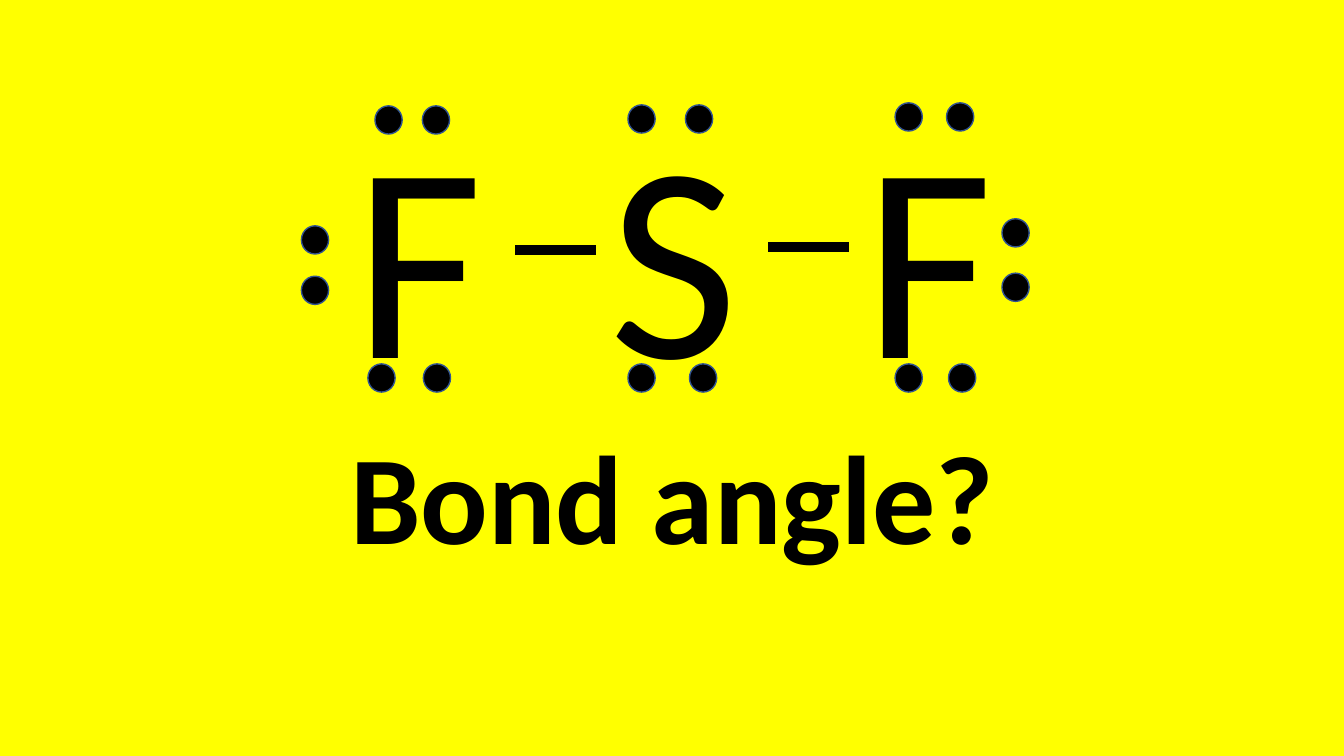
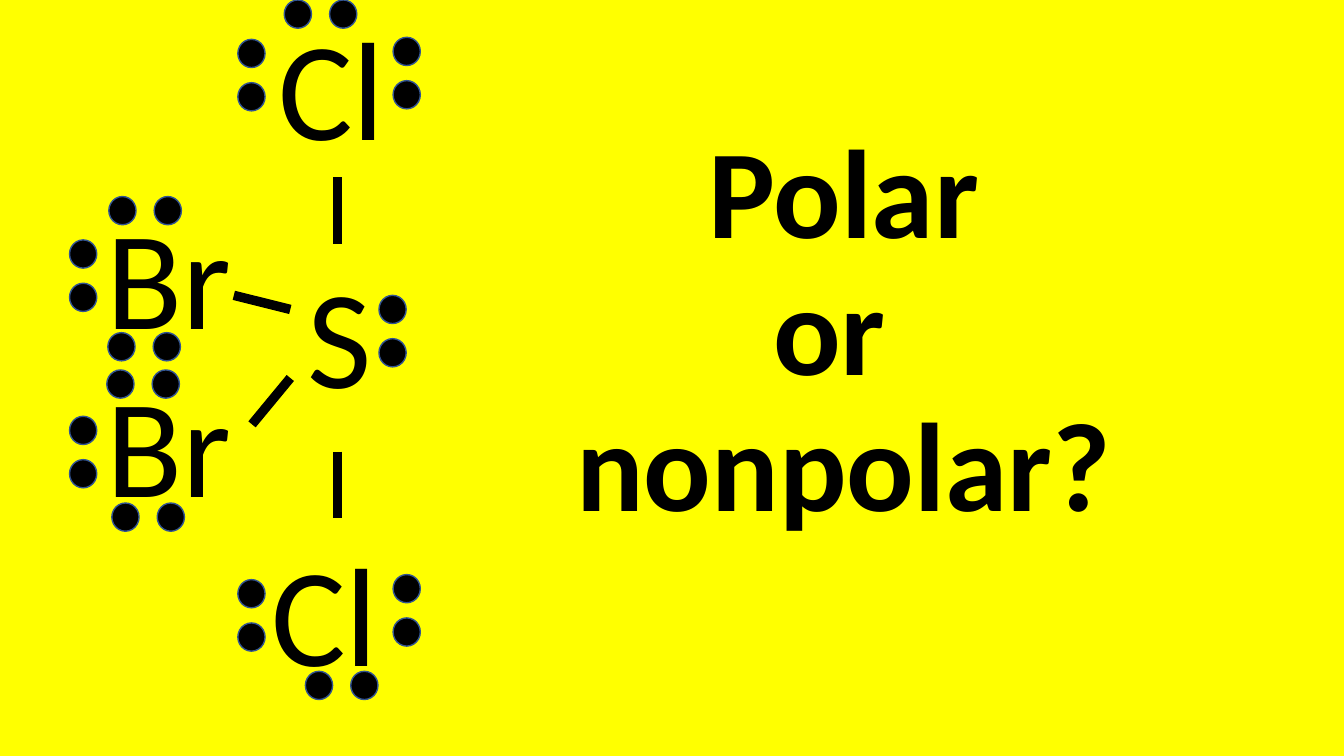
from dataclasses import dataclass

from lxml.etree import SubElement
from pptx import Presentation
from pptx.dml.color import RGBColor
from pptx.enum.shapes import MSO_CONNECTOR, MSO_SHAPE
from pptx.enum.text import MSO_ANCHOR, PP_ALIGN
from pptx.oxml.ns import qn
from pptx.util import Inches, Pt


@dataclass(frozen=True)
class Theme:
    """Colours, type sizes and the grid shared by all slides."""
    background: RGBColor = RGBColor(0xFF, 0xFF, 0x00)
    ink: RGBColor = RGBColor(0x00, 0x00, 0x00)
    outline: RGBColor = RGBColor(0x32, 0x54, 0x91)
    font: str = "Calibri"
    question_size: int = 90
    bond_width: float = 6.75
    outline_width: float = 1
    columns: float = 133.33
    rows: float = 75
    cell: float = 0.1  # inches per column and per row


class LewisDeck:
    """Holds the style and the current slide; lengths are columns and rows."""

    def __init__(self, theme):
        self.theme = theme
        self.presentation = Presentation()
        self.presentation.slide_width = self.grid(theme.columns)
        self.presentation.slide_height = self.grid(theme.rows)
        fill = self.presentation.slide_master.background.fill
        fill.solid()
        fill.fore_color.rgb = theme.background
        self.slide = None

    def grid(self, count):
        return Inches(count * self.theme.cell)

    def add_slide(self):
        blank = self.presentation.slide_layouts[6]
        self.slide = self.presentation.slides.add_slide(blank)

    def text_frame(self, column, row, width, height):
        box = self.slide.shapes.add_textbox(*map(self.grid, (column, row, width, height)))
        return box.text_frame

    def add_run(self, paragraph, text, size, bold=False):
        run = paragraph.add_run()
        run.text = text
        run.font.name = self.theme.font
        run.font.size = Pt(size)
        run.font.bold = bold
        run.font.color.rgb = self.theme.ink

    def question(self, lines, column, row):
        """Bold centred question standing on the bottom of its box."""
        frame = self.text_frame(column, row, 130.8, 28.4)
        frame.word_wrap = True
        frame.vertical_anchor = MSO_ANCHOR.BOTTOM
        paragraph = frame.paragraphs[0]
        paragraph.alignment = PP_ALIGN.CENTER
        paragraph.line_spacing = 0.9
        for index, line in enumerate(lines):
            if index:
                paragraph.add_line_break()
            self.add_run(paragraph, line, self.theme.question_size, bold=True)

    def atom(self, symbol, column, baseline, size):
        """Element symbol whose baseline lies one em below the box top."""
        em = size / 72 / self.theme.cell
        frame = self.text_frame(column, baseline - em, em * len(symbol), em * 1.22)
        frame.word_wrap = False
        frame.margin_left = frame.margin_right = 0
        frame.margin_top = frame.margin_bottom = 0
        self.add_run(frame.paragraphs[0], symbol, size)

    def bond(self, *ends):
        line = self.slide.shapes.add_connector(
            MSO_CONNECTOR.STRAIGHT, *map(self.grid, ends))
        line.line.color.rgb = self.theme.ink
        line.line.width = Pt(self.theme.bond_width)
        SubElement(line._element.spPr, qn("a:effectLst"))

    def electron(self, column, row):
        dot = self.slide.shapes.add_shape(
            MSO_SHAPE.OVAL, *map(self.grid, (column, row, 2.7, 2.8)))
        dot.shadow.inherit = False
        dot.fill.solid()
        dot.fill.fore_color.rgb = self.theme.ink
        dot.line.color.rgb = self.theme.outline
        dot.line.width = Pt(self.theme.outline_width)

    def pair_across(self, column, row, gap=4.5):
        self.electron(column, row)
        self.electron(column + gap, row)

    def pair_down(self, column, row, gap=4.3):
        self.electron(column, row)
        self.electron(column, row + gap)


def bond_angle_slide(deck):
    deck.add_slide()
    deck.question(["Bond angle?"], 1.3, 28.8)

    # Atoms at equal steps, joined by two bonds
    for index, symbol in enumerate("FSF"):
        deck.atom(symbol, 35.2 + 25.3 * index, 35.6, 200)
    for column, row in [(51.1, 24.8), (76.2, 24.5)]:
        deck.bond(column, row, column + 8, row)

    # Lone pairs above, below and at both ends
    for column, row, gap in [(37.2, 10.5, 4.7), (62.3, 10.4, 5.7), (88.8, 10.2, 5.1),
                             (36.5, 36.1, 5.5), (62.3, 36.1, 6.1), (88.8, 36.1, 5.3)]:
        deck.pair_across(column, row, gap)
    deck.pair_down(29.9, 22.4, 5)
    deck.pair_down(99.4, 21.7, 5.4)


def polarity_slide(deck):
    deck.add_slide()
    deck.question(["Polar", "or ", "nonpolar?"], 18.3, 25.5)

    # Central sulfur and its four neighbours
    for symbol, column, baseline in [("Cl", 27.6, 13.9), ("Br", 10.6, 32.7), ("Br", 10.6, 49.4),
                                     ("Cl", 26.9, 66.1), ("S", 30.5, 38.5)]:
        deck.atom(symbol, column, baseline, 100)

    # Bonds
    for ends in [(33.5, 17.6, 33.5, 24.2), (33.5, 44.8, 33.5, 51.4),
                 (23.2, 29.3, 28.8, 30.7), (25, 42.1, 28.8, 37.5)]:
        deck.bond(*ends)

    # Lone pairs
    for column, row in [(28.2, 0), (10.8, 19.5), (10.7, 33), (10.6, 36.7),
                        (11.1, 49.9), (30.3, 66.6)]:
        deck.pair_across(column, row)
    for column, row in [(23.6, 3.9), (39, 3.7), (6.9, 23.8), (37.6, 29.3),
                        (6.9, 41.3), (23.6, 57.5), (39, 57)]:
        deck.pair_down(column, row)


def main():
    deck = LewisDeck(Theme())
    bond_angle_slide(deck)
    polarity_slide(deck)
    deck.presentation.save("out.pptx")


if __name__ == "__main__":
    main()
